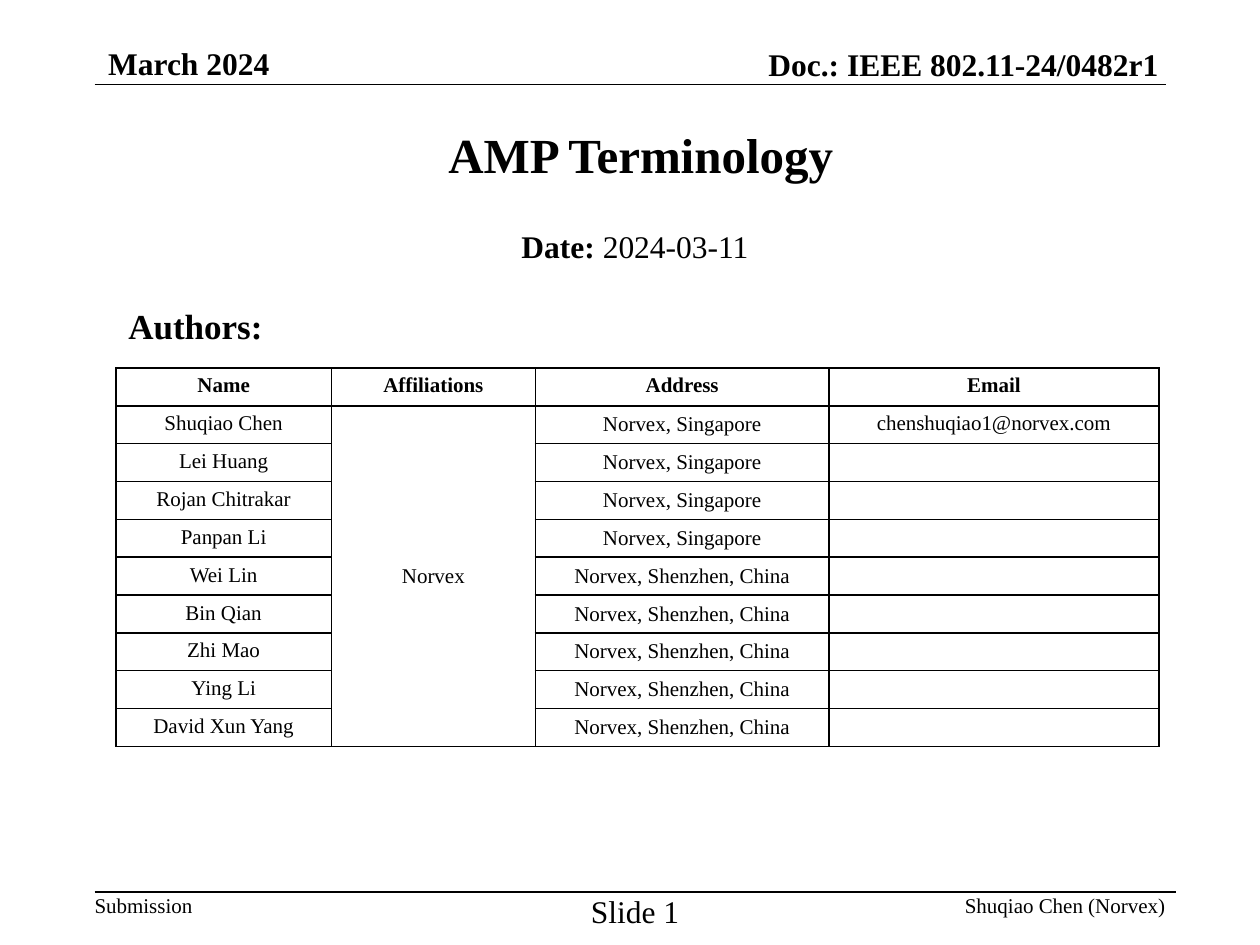
from lxml.etree import SubElement
from pptx import Presentation
from pptx.dml.color import RGBColor
from pptx.enum.shapes import MSO_CONNECTOR
from pptx.enum.text import MSO_ANCHOR, MSO_AUTO_SIZE, PP_ALIGN
from pptx.oxml.ns import qn
from pptx.util import Inches, Pt

BLACK = RGBColor(0, 0, 0)
WHITE = RGBColor(255, 255, 255)
FONT = "Times New Roman"

prs = Presentation()
prs.slide_width, prs.slide_height = Inches(10), Inches(7.5)
s = prs.slides.add_slide(prs.slide_layouts[6])
s.background.fill.solid()
s.background.fill.fore_color.rgb = WHITE


def add_run(p, text, size=12, bold=False, align=PP_ALIGN.LEFT):
    p.alignment = align
    r = p.add_run()
    r.text = text
    r.font.name = FONT
    r.font.size = Pt(size)
    r.font.bold = bold
    r.font.color.rgb = BLACK


def add_text(text, box, anchor=MSO_ANCHOR.TOP, inset=True, **fmt):
    tf = s.shapes.add_textbox(*[Inches(v) for v in box]).text_frame
    tf.word_wrap = inset
    tf.vertical_anchor = anchor
    if not inset:
        tf.auto_size = MSO_AUTO_SIZE.SHAPE_TO_FIT_TEXT
        tf.margin_left = tf.margin_right = tf.margin_top = tf.margin_bottom = 0
    add_run(tf.paragraphs[0], text, **fmt)
    return tf.paragraphs[0]


for y, right in [(0.67, 9.25), (7.08, 9.33)]:
    line = s.shapes.add_connector(MSO_CONNECTOR.STRAIGHT, Inches(0.75), Inches(y), Inches(right), Inches(y))
    line.line.color.rgb = BLACK
    line.line.width = Pt(1)
    SubElement(line._element.spPr, qn("a:effectLst"))

add_text("March 2024", (0.76, 0.3, 2.52, 0.36), size=18, bold=True)
add_text("Doc.: IEEE 802.11-24/0482r1", (6, 0.31, 3.42, 0.4), size=18, bold=True)
add_text("AMP Terminology", (0.17, 0.75, 9.83, 0.95), anchor=MSO_ANCHOR.MIDDLE,
         size=28, bold=True, align=PP_ALIGN.CENTER)
p = add_text("Date:", (0.79, 1.75, 8.5, 4.92), size=18, bold=True, align=PP_ALIGN.CENTER)
add_run(p, " 2024-03-11", size=18, align=PP_ALIGN.CENTER)
add_text("Authors:", (0.92, 2.37, 1.5, 0.27), size=20, bold=True)
add_text("Submission", (0.75, 7.08, 0.79, 0.2), inset=False)
add_text("Slide 1", (4.64, 7.08, 0.8, 0.28), inset=False, size=18, align=PP_ALIGN.CENTER)
add_text("Shuqiao Chen (Norvex)", (7.62, 7.08, 1.63, 0.2), inset=False, align=PP_ALIGN.RIGHT)

names = ["Shuqiao Chen", "Lei Huang", "Rojan Chitrakar", "Panpan Li", "Wei Lin",
         "Bin Qian", "Zhi Mao", "Ying Li", "David Xun Yang"]
rows = [["Name", "Affiliations", "Address", "Email"]]
for i, name in enumerate(names):
    city = "Singapore" if i < 4 else "Shenzhen, China"
    rows.append([name, "", f"Norvex, {city}", ""])
rows[1][1] = "Norvex"
rows[1][3] = "chenshuqiao1@norvex.com"

widths = [1.71, 1.62, 2.33, 2.62]
tbl = s.shapes.add_table(len(rows), len(widths), Inches(0.92), Inches(2.92),
                         Inches(sum(widths)), Inches(0.28 * len(rows))).table
tbl.first_row = tbl.horz_banding = False
for col, width in zip(tbl.columns, widths):
    col.width = Inches(width)
for i, row in enumerate(rows):
    tbl.rows[i].height = Inches(0.28)
    for j, text in enumerate(row):
        cell = tbl.cell(i, j)
        cell.vertical_anchor = MSO_ANCHOR.MIDDLE if i and j in (1, 2) else MSO_ANCHOR.TOP
        p = cell.text_frame.paragraphs[0]
        if text:
            add_run(p, text, bold=i == 0, align=PP_ALIGN.CENTER)
        else:
            end = SubElement(p._p, qn("a:endParaRPr"), sz="1200")
            SubElement(end, qn("a:latin"), typeface=FONT)
        tcPr = cell._tc.get_or_add_tcPr()
        for side in ("L", "R", "T", "B"):
            ln = SubElement(tcPr, qn(f"a:ln{side}"), w="12700")
            SubElement(SubElement(ln, qn("a:solidFill")), qn("a:srgbClr"), val=str(BLACK))
        cell.fill.background()
tbl.cell(1, 1).merge(tbl.cell(len(names), 1))

prs.save("out.pptx")
